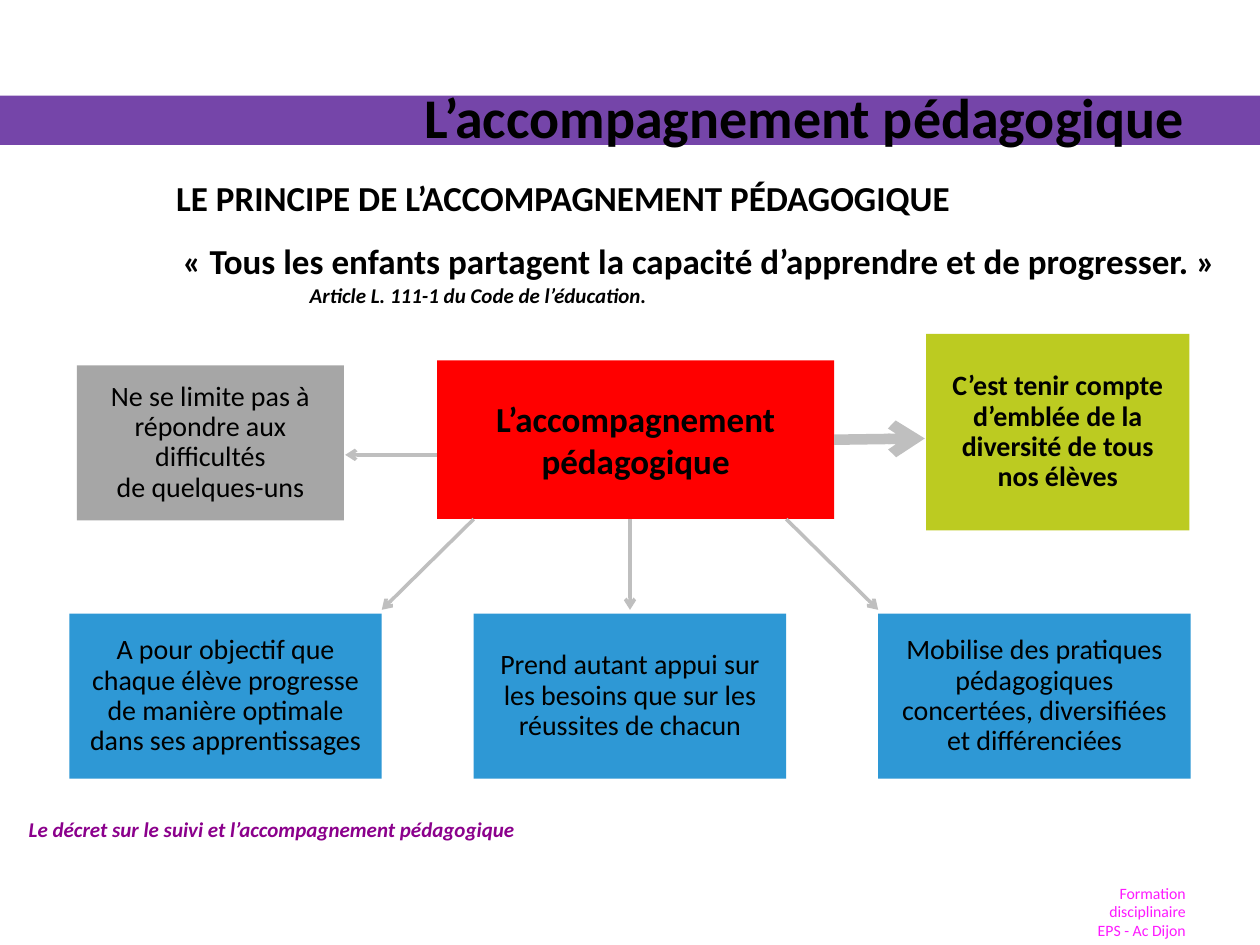
from lxml.etree import SubElement
from pptx import Presentation
from pptx.dml.color import RGBColor
from pptx.enum.shapes import MSO_CONNECTOR as Connector, MSO_SHAPE as Shape
from pptx.enum.text import MSO_ANCHOR as Anchor, PP_ALIGN as Align
from pptx.oxml.ns import qn
from pptx.util import Inches, Pt

BLACK = RGBColor(0x00, 0x00, 0x00)
PURPLE = RGBColor(0x75, 0x45, 0xA9)
VIOLET = RGBColor(0x8B, 0x00, 0x8C)
PINK = RGBColor(0xFE, 0x19, 0xFF)
GREEN = RGBColor(0xBC, 0xCB, 0x21)
GREY = RGBColor(0xA6, 0xA6, 0xA6)
SILVER = RGBColor(0xBF, 0xBF, 0xBF)
RED = RGBColor(0xFF, 0x00, 0x00)
BLUE = RGBColor(0x2E, 0x98, 0xD5)


class Painter:
    font_name = "Calibri"

    def __init__(self, page):
        self.page = page

    def fill_para(self, para, text, size, color=BLACK, bold=False, italic=False,
                  align=Align.LEFT, spacing=1.0, before=0):
        para.text = text
        para.alignment = align
        para.line_spacing = spacing
        para.space_before = Pt(before)
        font = para.font
        font.name, font.size = self.font_name, Pt(size)
        font.bold, font.italic = bold, italic
        font.color.rgb = color

    def text(self, left, top, width, height, lines, wrap=True, anchor=Anchor.TOP, margin=None):
        box = self.page.shapes.add_textbox(*map(Inches, (left, top, width, height)))
        frame = box.text_frame
        frame.word_wrap = wrap
        frame.vertical_anchor = anchor
        if margin is not None:
            frame.margin_left = frame.margin_right = Inches(margin)
            frame.margin_top = frame.margin_bottom = Inches(margin)
        for index, style in enumerate(lines):
            para = frame.add_paragraph() if index else frame.paragraphs[0]
            self.fill_para(para, **style)
        return box

    def block(self, left, top, width, height, fill, lines=(), size=16, bold=False, spacing=0.9):
        box = self.page.shapes.add_shape(
            Shape.RECTANGLE, *map(Inches, (left, top, width, height)))
        box.shadow.inherit = False
        box.fill.solid()
        box.fill.fore_color.rgb = fill
        box.line.fill.background()
        frame = box.text_frame
        frame.word_wrap = True
        frame.vertical_anchor = Anchor.MIDDLE
        for index, line in enumerate(lines):
            para = frame.add_paragraph() if index else frame.paragraphs[0]
            self.fill_para(para, line, size, bold=bold, align=Align.CENTER, spacing=spacing)
        return box

    def arrow(self, start, end, width=2):
        line = self.page.shapes.add_connector(
            Connector.STRAIGHT, *map(Inches, (*start, *end)))
        line.line.color.rgb = SILVER
        line.line.width = Pt(width)
        properties = line._element.spPr
        SubElement(properties.get_or_add_ln(), qn("a:tailEnd"), type="arrow")
        SubElement(properties, qn("a:effectLst"))
        return line


def main():
    deck = Presentation()
    deck.slide_width, deck.slide_height = Inches(10), Inches(7.5)
    painter = Painter(deck.slides.add_slide(deck.slide_layouts[6]))

    painter.block(0, 0.76, 10, 0.39, PURPLE)
    painter.text(2.4, 0.3, 7.1, 1.25, [
        dict(text="L’accompagnement pédagogique", size=32, bold=True, align=Align.RIGHT),
    ], anchor=Anchor.MIDDLE)

    principle = painter.text(1.3, 1.39, 8.5, 1.26, [
        dict(text="LE PRINCIPE DE L’ACCOMPAGNEMENT PÉDAGOGIQUE",
             size=20, bold=True, spacing=0.9),
        dict(text="« Tous les enfants partagent la capacité d’apprendre et de progresser. »",
             size=20, bold=True, align=Align.CENTER, spacing=0.9, before=14.4),
        dict(text="Article L. 111-1 du Code de l’éducation.",
             size=12, bold=True, italic=True, spacing=0.9, before=2),
    ])
    citation = principle.text_frame.paragraphs[-1]
    citation._p.get_or_add_pPr().set("marL", str(Inches(1.06)))

    painter.block(0.61, 2.9, 2.12, 1.23, GREY,
                  ["Ne se limite pas à", "répondre aux difficultés", "de quelques-uns"])
    center = painter.block(3.47, 2.86, 3.15, 1.26, RED,
                           ["L’accompagnement", "pédagogique"], size=20, bold=True, spacing=1.0)
    painter.block(7.35, 2.65, 2.09, 1.56, GREEN,
                  ["C’est tenir compte d’emblée de la diversité de tous nos élèves"], bold=True)

    goals = [
        "A pour objectif que chaque élève progresse de manière optimale dans ses apprentissages",
        "Prend autant appui sur les besoins que sur les réussites de chacun",
        "Mobilise des pratiques pédagogiques concertées, diversifiées et différenciées",
    ]
    for column, goal in enumerate(goals):
        painter.block(0.55 + 3.21 * column, 4.87, 2.48, 1.31, BLUE, [goal])

    for start, end in [(3.76, 3.03), (5, 5), (6.24, 6.97)]:
        painter.arrow((start, 4.12), (end, 4.84))
    painter.arrow((3.47, 3.61), (2.74, 3.61))
    painter.arrow((6.62, 3.49), (7.34, 3.48), width=6).begin_connect(center, 3)

    painter.text(0.13, 6.43, 4.74, 0.3, [
        dict(text="Le décret sur le suivi et l’accompagnement pédagogique",
             size=12, color=VIOLET, bold=True, italic=True),
    ], wrap=False)
    painter.text(8.7, 7.01, 0.71, 0.21, [
        dict(text="Formation disciplinaire EPS - Ac Dijon", size=9, color=PINK, align=Align.RIGHT),
    ], margin=0)

    deck.save("out.pptx")


if __name__ == "__main__":
    main()
